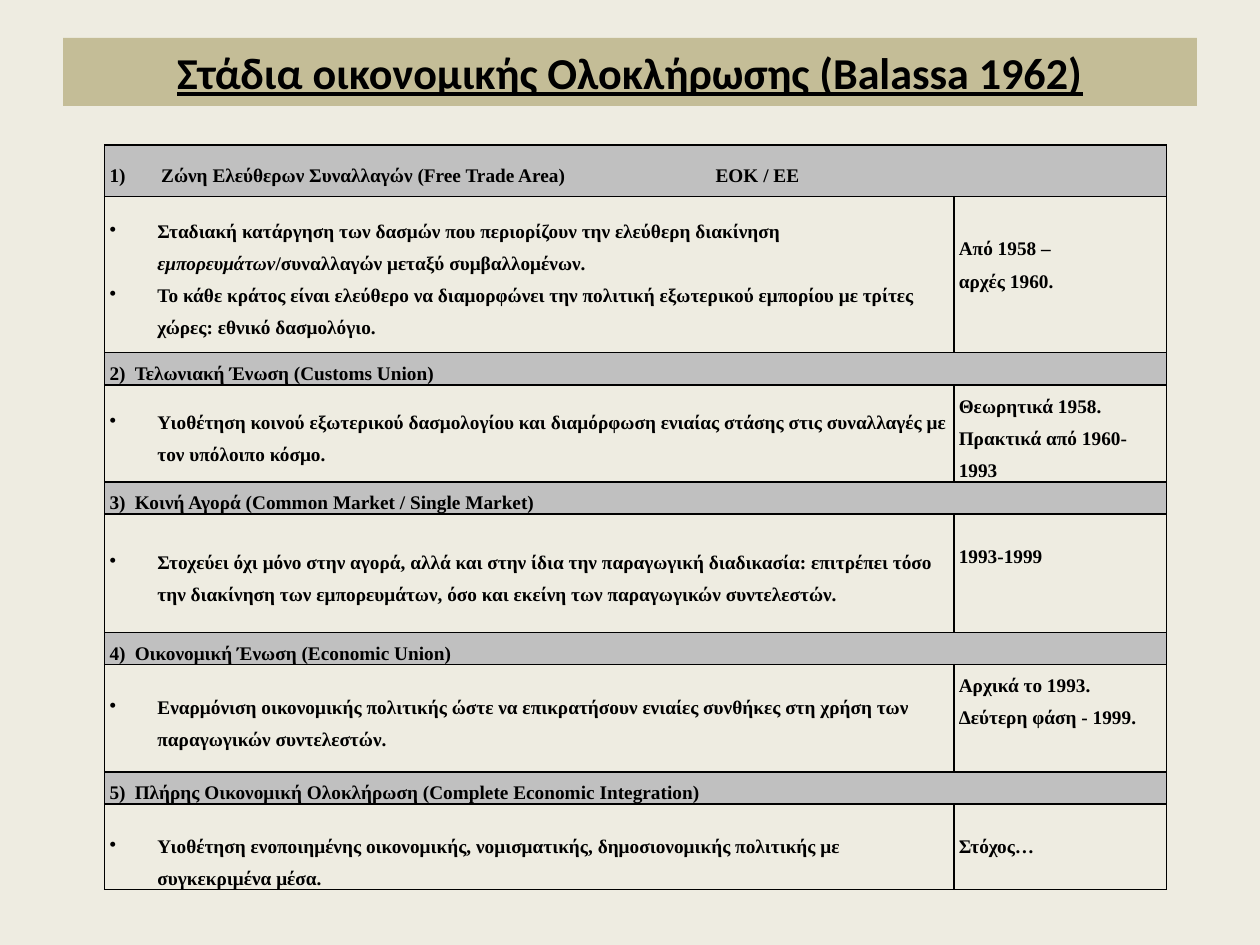
from lxml import etree
from pptx import Presentation
from pptx import util as u
from pptx.dml.color import RGBColor
from pptx.enum import text
from pptx.oxml import ns

COLORS = {"page": "EEECE1", "title": "C4BD97", "header": "C0C0C0", "ink": "000000"}
BODY_FONT = "Times New Roman"
TOP, MIDDLE = text.MSO_ANCHOR.TOP, text.MSO_ANCHOR.MIDDLE

STAGES = [
    ("Ζώνη Ελεύθερων Συναλλαγών (Free Trade Area)\tΕΟΚ / ΕΕ", 0.41, 1.24,
     [["Σταδιακή κατάργηση των δασμών που περιορίζουν την ελεύθερη διακίνηση ",
       "εμπορευμάτων", "/συναλλαγών μεταξύ συμβαλλομένων."],
      ["Το κάθε κράτος είναι ελεύθερο να διαμορφώνει την πολιτική εξωτερικού "
       "εμπορίου με τρίτες χώρες: εθνικό δασμολόγιο."]], 0,
     ["Από 1958 –", "αρχές 1960."], TOP, 0.25),
    ("2)\tΤελωνιακή Ένωση (Customs Union)", 0.25, 0.77,
     [["Υιοθέτηση κοινού εξωτερικού δασμολογίου και διαμόρφωση ενιαίας στάσης "
       "στις συναλλαγές με τον υπόλοιπο κόσμο."]], 0,
     ["Θεωρητικά 1958. Πρακτικά από 1960-1993"], MIDDLE, 0),
    ("3)\tΚοινή Αγορά (Common Market / Single Market)", 0.25, 0.94,
     [["Στοχεύει όχι μόνο στην αγορά, αλλά και στην ίδια την παραγωγική διαδικασία: "
       "επιτρέπει τόσο την διακίνηση των εμπορευμάτων, όσο και εκείνη των "
       "παραγωγικών συντελεστών."]], 0,
     ["1993-1999"], TOP, 0.17),
    ("4)\tΟικονομική Ένωση (Economic Union)", 0.25, 0.85,
     [["Εναρμόνιση οικονομικής πολιτικής ώστε να επικρατήσουν ενιαίες συνθήκες "
       "στη χρήση των παραγωγικών συντελεστών."]], 0,
     ["Αρχικά το 1993. Δεύτερη φάση - 1999."], TOP, 0),
    ("5)\tΠλήρης Οικονομική Ολοκλήρωση (Complete Economic Integration)", 0.25, 0.68,
     [["Υιοθέτηση ενοποιημένης οικονομικής, νομισματικής, δημοσιονομικής πολιτικής "
       "με συγκεκριμένα μέσα."]], 0.17,
     ["Στόχος…"], TOP, 0.17),
]


class SlideBuilder:
    def __init__(self, deck):
        self.page = deck.slides.add_slide(deck.slide_layouts[5])
        self.paint(self.page.background.fill, "page")

    def paint(self, fill, name):
        fill.solid()
        fill.fore_color.rgb = RGBColor.from_string(COLORS[name])

    def style(self, font, name, size):
        font.name, font.size, font.bold = name, u.Pt(size), True
        font.color.rgb = RGBColor.from_string(COLORS["ink"])

    def title(self, words, left, top, width, height):
        box = self.page.shapes.title
        box.left, box.top, box.width, box.height = map(u.Inches, (left, top, width, height))
        self.paint(box.fill, "title")
        frame = box.text_frame
        frame.text = words
        frame.auto_size = text.MSO_AUTO_SIZE.NONE
        frame.vertical_anchor = MIDDLE
        para = frame.paragraphs[0]
        para.alignment = text.PP_ALIGN.CENTER
        self.style(para.font, "Calibri", 25.2)
        para.font.underline = True

    def table(self, left, top, widths, heights):
        sizes = map(u.Inches, (left, top, sum(widths), sum(heights)))
        table = self.page.shapes.add_table(len(heights), len(widths), *sizes).table
        table.first_row = table.horz_banding = False
        for column, width in zip(table.columns, widths):
            column.width = u.Inches(width)
        for row, height in zip(table.rows, heights):
            row.height = u.Inches(height)
        for cell in table.iter_cells():
            self.borders(cell)
            cell.fill.background()
            cell.margin_left = cell.margin_right = u.Inches(0.04)
            cell.margin_top = cell.margin_bottom = 0
        return table

    def borders(self, cell):
        properties = cell._tc.get_or_add_tcPr()
        for side in ("a:lnL", "a:lnR", "a:lnT", "a:lnB"):
            line = etree.SubElement(properties, ns.qn(side), w=str(u.Pt(1)))
            fill = etree.SubElement(line, ns.qn("a:solidFill"))
            etree.SubElement(fill, ns.qn("a:srgbClr"), val=COLORS["ink"])

    def fill_cell(self, cell, paragraphs, anchor=MIDDLE, gap=0, hang=0, marker=None, tab=None):
        cell.vertical_anchor = anchor
        cell.margin_top = u.Inches(gap)
        frame = cell.text_frame
        for index, pieces in enumerate(paragraphs):
            para = frame.add_paragraph() if index else frame.paragraphs[0]
            para.line_spacing = 1.5
            self.layout(para, hang, marker, tab)
            self.style(para.font, BODY_FONT, 11)
            for position, piece in enumerate(pieces):
                span = para.add_run()
                span.text = piece
                if position == 1:
                    span.font.italic = True

    def layout(self, para, hang, marker, tab):
        properties = para._p.get_or_add_pPr()
        if marker:
            properties.set("marL", str(u.Inches(hang)))
            properties.set("indent", str(-u.Inches(hang)))
            tag, attribute, value = marker
            etree.SubElement(properties, ns.qn(tag)).set(attribute, value)
        if tab:
            stops = etree.SubElement(properties, ns.qn("a:tabLst"))
            etree.SubElement(stops, ns.qn("a:tab"), pos=str(u.Inches(tab)), algn="l")


def main():
    deck = Presentation()
    deck.slide_width, deck.slide_height = u.Inches(10), u.Inches(7.5)
    builder = SlideBuilder(deck)
    builder.title("Στάδια οικονομικής Ολοκλήρωσης (Balassa 1962)", 0.5, 0.3, 9, 0.54)

    heights = [height for stage in STAGES for height in stage[1:3]]
    table = builder.table(0.83, 1.15, [6.74, 1.69], heights)
    bullet = ("a:buChar", "char", "•")
    number = ("a:buAutoNum", "type", "arabicParenR")
    for index, (name, _, _, points, point_gap, dates, anchor, date_gap) in enumerate(STAGES):
        row = 2 * index
        header = table.cell(row, 0)
        header.merge(table.cell(row, 1))
        builder.paint(header.fill, "header")
        if index:
            builder.fill_cell(header, [[name]], tab=0.2)
        else:
            builder.fill_cell(header, [[name]], hang=0.41, marker=number, tab=4.81)
        builder.fill_cell(table.cell(row + 1, 0), points, gap=point_gap, hang=0.38, marker=bullet)
        builder.fill_cell(table.cell(row + 1, 1), [[date] for date in dates], anchor, date_gap)

    deck.save("out.pptx")


if __name__ == "__main__":
    main()
